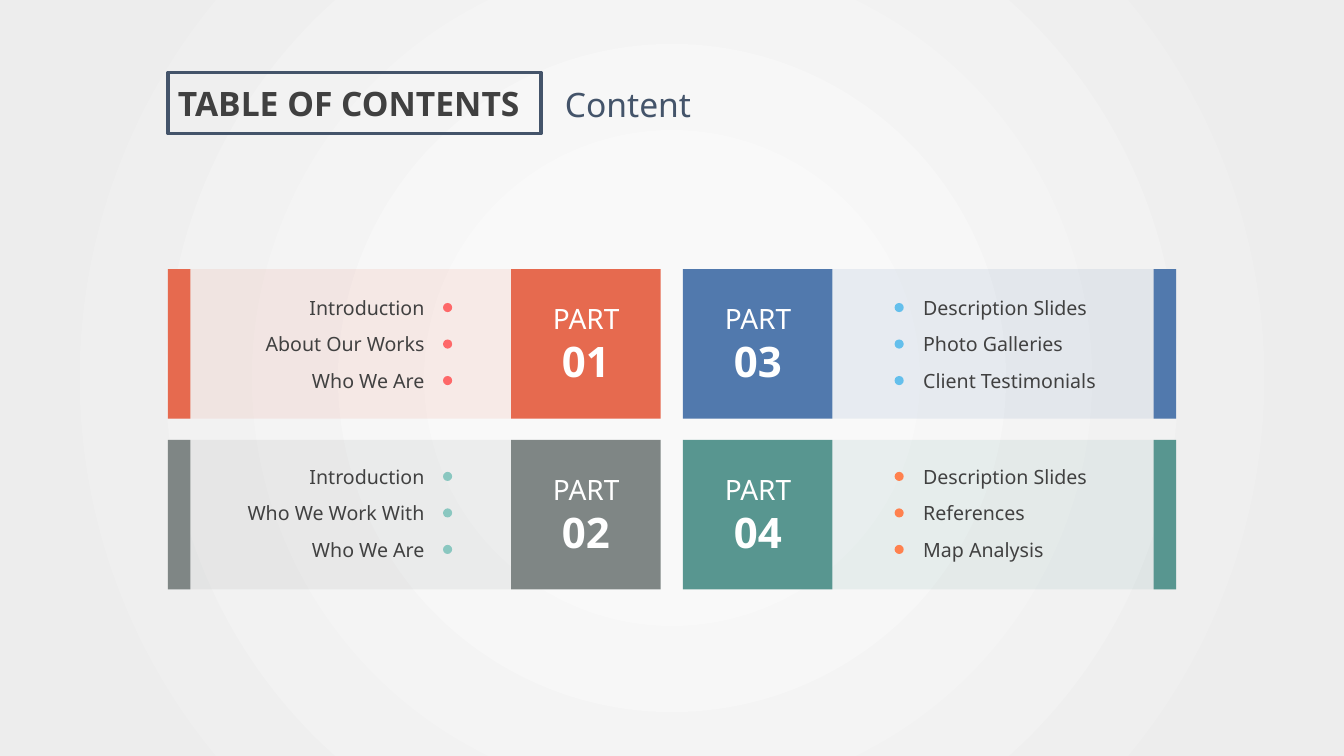
from dataclasses import dataclass

from lxml import etree
from pptx import Presentation
from pptx import util as u
from pptx.dml.color import RGBColor
from pptx.enum import shapes, text
from pptx.oxml import parse_xml
from pptx.oxml.ns import nsdecls, qn


@dataclass(frozen=True)
class Theme:
    font: str = "Noto Sans"
    navy: str = "44546A"
    title: str = "404040"
    body: str = "414141"
    white: str = "FFFFFF"
    title_size: int = 48
    label_size: int = 40
    number_size: int = 60
    body_size: int = 28
    panel_alpha: int = 10
    # Background stops: position %, colour, opacity %
    glow: tuple = ((21, "F9F9F9", 66), (88, "EDEDED", 30))
    # Card colour, bullet dot colour
    cards: tuple = (("E66A4F", "FE6869"), ("7F8685", "8AC7C0"),
                    ("5179AD", "64BFEC"), ("589690", "FF814E"))


T = Theme()
RECT, OVAL = shapes.MSO_SHAPE.RECTANGLE, shapes.MSO_SHAPE.OVAL
LEFT, CENTER, RIGHT = text.PP_ALIGN.LEFT, text.PP_ALIGN.CENTER, text.PP_ALIGN.RIGHT


def add_shape(kind, x, y, w, h, fill=None, alpha=100):
    sp = s.shapes.add_shape(kind, u.Cm(x), u.Cm(y), u.Cm(w), u.Cm(h))
    sp.shadow.inherit = False
    sp.line.fill.background()
    if fill is None:
        sp.fill.background()
    else:
        sp.fill.solid()
        sp.fill.fore_color.rgb = RGBColor.from_string(fill)
        if alpha < 100:
            color = sp.element.spPr.find(qn("a:solidFill"))[0]
            etree.SubElement(color, qn("a:alpha"), val=str(alpha * 1000))
    return sp


def add_text(words, box=None, sp=None, size=T.body_size, color=T.body,
             bold=None, align=LEFT, wrap=False, grow=True):
    sp = sp or s.shapes.add_textbox(*[u.Cm(v) for v in box])
    tf = sp.text_frame
    tf.word_wrap = wrap
    tf.auto_size = (text.MSO_AUTO_SIZE.SHAPE_TO_FIT_TEXT if grow
                    else text.MSO_AUTO_SIZE.NONE)
    tf.vertical_anchor = text.MSO_ANCHOR.MIDDLE
    p = tf.paragraphs[0]
    p.alignment = align
    r = p.add_run()
    r.text = words
    r.font.name, r.font.size, r.font.bold = T.font, u.Pt(size), bold
    r.font.color.rgb = RGBColor.from_string(color)
    return sp


prs = Presentation()
prs.slide_width, prs.slide_height = u.Cm(67.74), u.Cm(38.1)
s = prs.slides.add_slide(prs.slide_layouts[6])

# Background: circular glow from the centre
s.background.fill.solid()
bg = s.element.find(".//" + qn("p:bgPr"))
stops = "".join(
    f'<a:gs pos="{pos * 1000}"><a:srgbClr val="{color}">'
    f'<a:alpha val="{alpha * 1000}"/></a:srgbClr></a:gs>'
    for pos, color, alpha in T.glow)
bg.replace(bg[0], parse_xml(
    f'<a:gradFill {nsdecls("a")} rotWithShape="1"><a:gsLst>{stops}</a:gsLst>'
    '<a:path path="circle"><a:fillToRect l="50000" t="50000" r="50000" b="50000"/>'
    '</a:path></a:gradFill>'))

# Heading
add_text("Content", (28.22, 4.09, 12.07, 2.31), size=T.title_size,
         color=T.navy, grow=False)
sp = add_shape(RECT, 8.46, 3.66, 18.82, 3.07)
sp.line.color.rgb = RGBColor.from_string(T.navy)
sp.line.width = u.Pt(5)
tf = sp.text_frame
tf.margin_left = tf.margin_right = tf.margin_top = tf.margin_bottom = u.Cm(0.51)
add_text("TABLE OF CONTENTS", sp=sp, size=T.title_size, color=T.title, bold=True)

# Cards: two columns of two, filled column by column
topics = (
    ("Introduction", "About Our Works", "Who We Are"),
    ("Introduction", "Who We Work With", "Who We Are"),
    ("Description Slides", "Photo Galleries", "Client Testimonials"),
    ("Description Slides", "References", "Map Analysis"),
)
# Per column: x of panel, bar, block, dot, topic; topic width and alignment
columns = (
    (8.46, 8.46, 25.76, 22.33, 10.72, 10.92, RIGHT),
    (41.96, 58.14, 34.42, 45.09, 46.28, 9.55, LEFT),
)
block = 7.54

for i, ((color, dot_color), names) in enumerate(zip(T.cards, topics)):
    col, row = divmod(i, 2)
    panel_x, bar_x, block_x, dot_x, topic_x, topic_w, align = columns[col]
    y = 13.56 + 8.61 * row

    # Panel, edge bar and square block
    add_shape(RECT, panel_x, y, 17.32, block, color, T.panel_alpha)
    add_shape(RECT, bar_x, y, 1.14, block, color)
    add_shape(RECT, block_x, y, block, block, color)

    # Card number
    add_text("PART", (block_x + 1.84, y + 1.52, 3.89, 1.96),
             size=T.label_size, color=T.white, align=CENTER)
    add_text(f"{i + 1:02}", (block_x + 2.3, y + 3.2, 2.95, 2.82),
             size=T.number_size, color=T.white, bold=True, align=CENTER)

    # Topics with dots
    for j, name in enumerate(names):
        topic_y = 14.78 + 8.51 * row + 1.84 * j
        add_shape(OVAL, dot_x, topic_y + 0.49, 0.46, 0.46, dot_color)
        add_text(name, (topic_x, topic_y, topic_w, 1.45), align=align, wrap=True)

prs.save("out.pptx")
